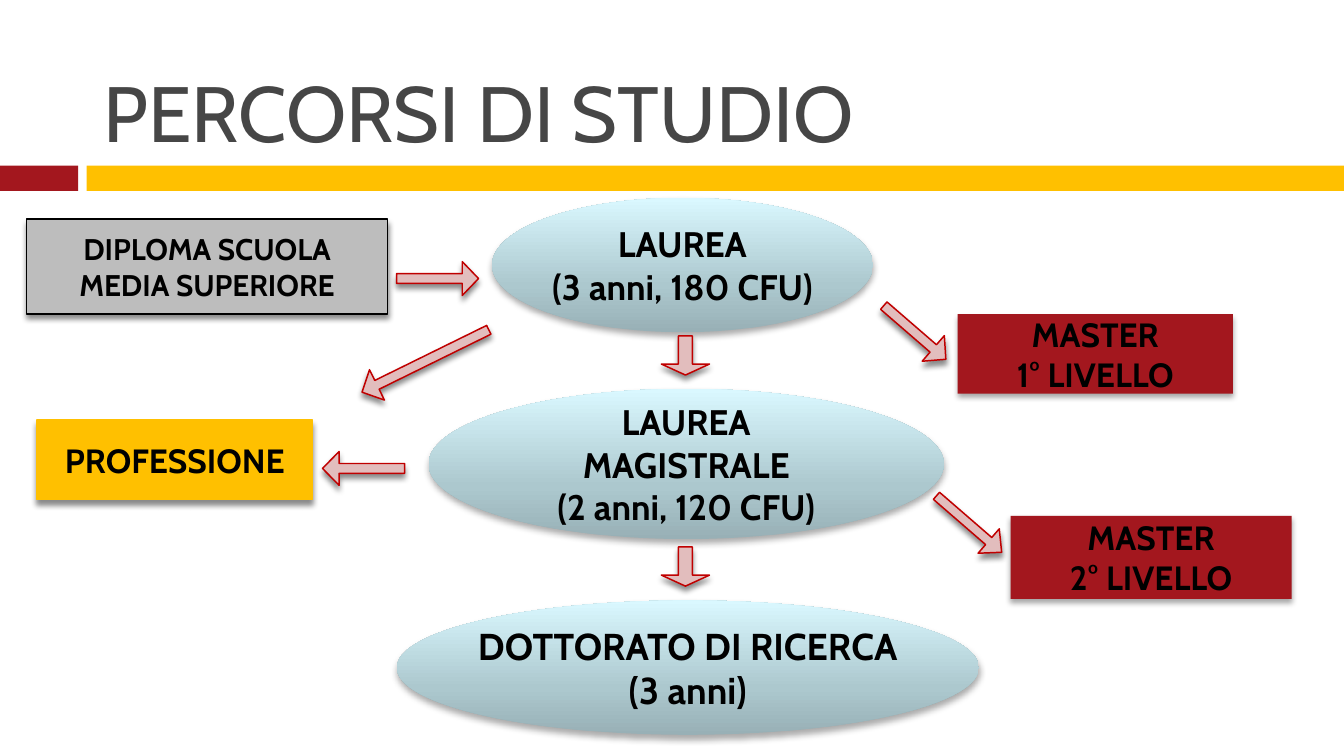
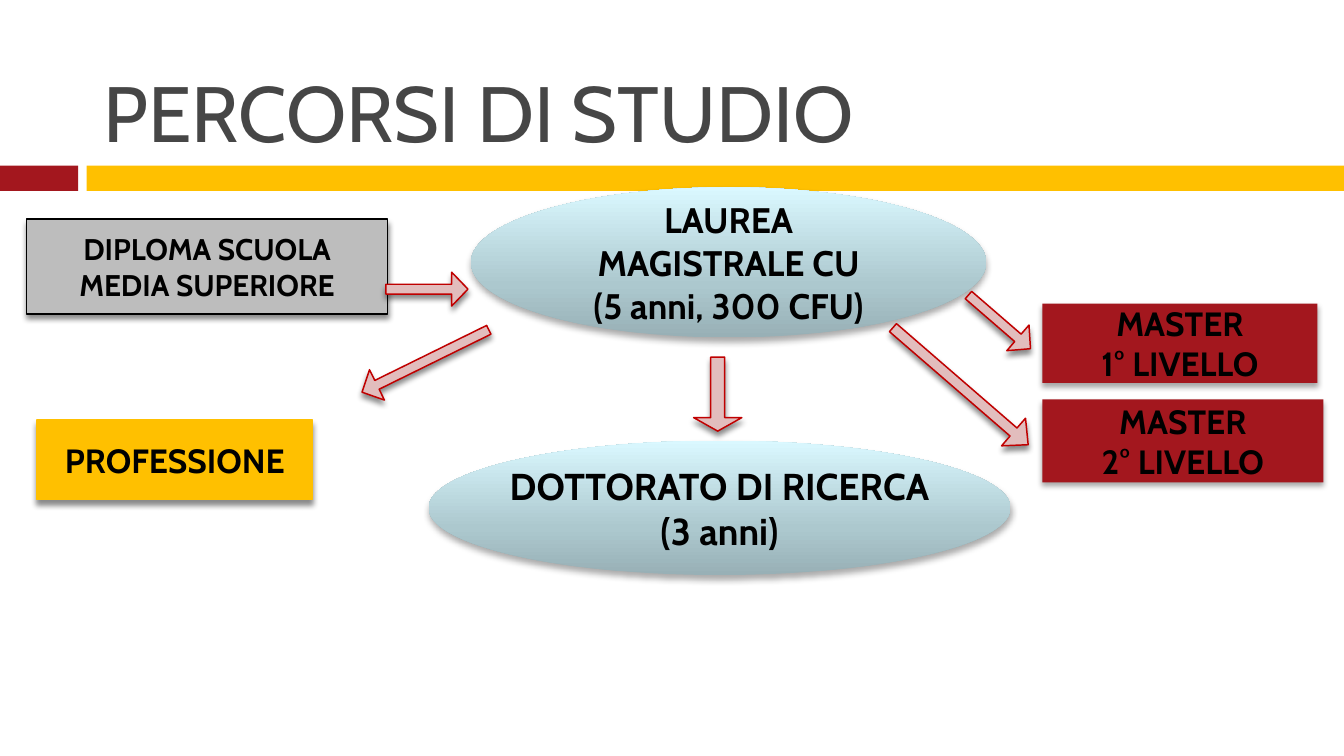
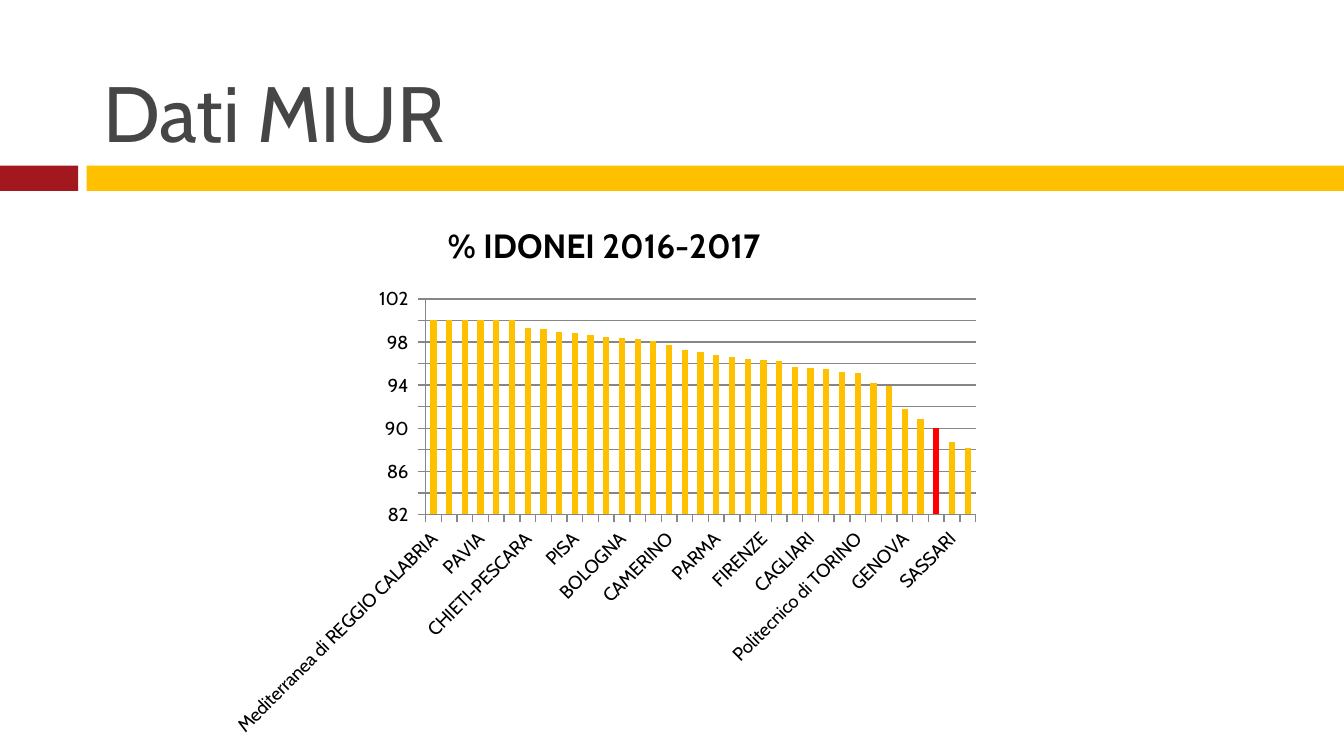
"""Build three slides on Italian study paths and the national results chart."""
from copy import deepcopy

from lxml.etree import SubElement
from pptx import Presentation
from pptx.chart.data import CategoryChartData
from pptx.dml.color import RGBColor
from pptx.enum.chart import XL_CHART_TYPE, XL_TICK_MARK
from pptx.enum.shapes import MSO_SHAPE
from pptx.enum.text import MSO_ANCHOR, MSO_AUTO_SIZE, PP_ALIGN
from pptx.oxml.ns import qn
from pptx.util import Cm, Pt

FONT = "Cabin"
COLORS = {
    "red": "A3171E", "yellow": "FFC000", "gray": "BDBDBD", "black": "000000",
    "title": "464646", "arrow": "E2BDBD", "arrow_line": "C00000",
    "highlight": "FF0000", "grid": "868686",
}
DEGREE_GRADIENT = [(0, "98B0B6"), (0.35, "ACC8CE"), (1, "DAF8FF")]
STYLES = {
    "school": dict(preset=MSO_SHAPE.RECTANGLE, fill="gray", line="black", shadow=(45, 3, 2.4)),
    "degree": dict(preset=MSO_SHAPE.OVAL, fill=None, line=None, shadow=(32, 3.5, 2.2)),
    "master": dict(preset=MSO_SHAPE.RECTANGLE, fill="red", line=None, shadow=(35, 3, 2)),
    "job": dict(preset=MSO_SHAPE.RECTANGLE, fill="yellow", line="yellow", shadow=(45, 3, 2.4)),
    "arrow": dict(preset=MSO_SHAPE.DOWN_ARROW, fill="arrow", line="arrow_line", shadow=(45, 3, 2.4)),
}


def color(name):
    return RGBColor.from_string(COLORS[name])


def write(text_frame, text, size=18, ink="black", bold=True, align=PP_ALIGN.CENTER):
    text_frame.text = text
    for paragraph in text_frame.paragraphs:
        paragraph.alignment = align
        for run in paragraph.runs:
            run.font.name = FONT
            run.font.size = Pt(size)
            run.font.bold = bold
            run.font.color.rgb = color(ink)


presentation = Presentation()
presentation.slide_width = Cm(25.4)
presentation.slide_height = Cm(14.29)
layout = presentation.slide_layouts[5]
layout_tree = layout.placeholders[0].element.getparent()
for placeholder in list(layout.placeholders)[1:]:
    layout_tree.remove(placeholder.element)

slides = []
for title_text in ("PERCORSI DI STUDIO", "PERCORSI DI STUDIO", "Dati MIUR"):
    slide = presentation.slides.add_slide(layout)
    title = slide.shapes.title
    title.left, title.top, title.width, title.height = Cm(1.7), Cm(0.33), Cm(22.66), Cm(2.79)
    title.text_frame.word_wrap = True
    title.text_frame.auto_size = MSO_AUTO_SIZE.NONE
    title.text_frame.vertical_anchor = MSO_ANCHOR.BOTTOM
    write(title.text_frame, title_text, size=42, ink="title", bold=False, align=PP_ALIGN.LEFT)
    slides.append(slide)

for number, (left, width, fill) in enumerate([(0, 1.48, "red"), (1.64, 23.76, "yellow")]):
    band = slides[0].shapes.add_shape(MSO_SHAPE.RECTANGLE, Cm(left), Cm(3.13), Cm(width), Cm(0.48))
    band.fill.solid()
    band.fill.fore_color.rgb = color(fill)
    band.line.fill.background()
    band.shadow.inherit = False
    band.element.nvSpPr.cNvPr.set("id", str(20 + number))
    layout_tree.append(band.element)

SCHOOL = ("school", 0.5, 4.14, 6.83, 1.8, "DIPLOMA SCUOLA\nMEDIA SUPERIORE", 16)
JOB = ("job", 0.7, 7.94, 5.21, 1.5, "PROFESSIONE", 18)
DOCTORATE = "DOTTORATO DI RICERCA\n(3 anni)"
FIRST_MASTER = "MASTER\n1° LIVELLO"
SECOND_MASTER = "MASTER\n2° LIVELLO"
path_boxes = [
    [
        SCHOOL,
        ("degree", 9.3, 3.74, 7.2, 2.54, "LAUREA\n(3 anni, 180 CFU)", 19),
        ("degree", 7.5, 11.35, 11, 2.54, DOCTORATE, 20),
        ("master", 19.1, 9.75, 5.31, 1.57, SECOND_MASTER, 18),
        ("degree", 8.1, 7.35, 9.74, 2.84, "LAUREA\nMAGISTRALE\n(2 anni, 120 CFU)", 19),
        ("master", 18.1, 5.94, 5.2, 1.5, FIRST_MASTER, 18),
        JOB,
    ],
    [
        SCHOOL,
        ("degree", 8.1, 8.33, 11, 2.54, DOCTORATE, 20),
        ("master", 19.7, 7.55, 5.31, 1.57, SECOND_MASTER, 18),
        ("master", 19.7, 5.74, 5.2, 1.5, FIRST_MASTER, 18),
        JOB,
        ("degree", 8.9, 3.54, 9.74, 2.84, "LAUREA\nMAGISTRALE CU\n(5 anni, 300 CFU)", 19),
    ],
]
path_arrows = [
    [
        (7.95, 4.49, 0.64, 1.55, 270, 0.48),
        (16.97, 5.51, 0.64, 1.55, 310.9, 0.49),
        (12.5, 6.35, 0.91, 0.74, 0, 0.28),
        (7.72, 5.49, 0.64, 2.67, 63.8, 0.49),
        (18.01, 9.09, 0.61, 1.63, 310.9, 0.53),
        (12.5, 10.34, 0.91, 0.74, 0, 0.28),
        (6.55, 8.08, 0.64, 1.55, 90, 0.49),
    ],
    [
        (7.75, 4.69, 0.64, 1.55, 270, 0.48),
        (18.57, 5.31, 0.64, 1.55, 310.9, 0.49),
        (13.11, 6.75, 0.91, 1.4, 0, 0.28),
        (7.72, 5.49, 0.64, 2.67, 63.8, 0.49),
        (17.81, 5.61, 0.69, 3.38, 310.9, 0.53),
    ],
]

for slide, boxes, arrows in zip(slides, path_boxes, path_arrows):
    items = [(*box, 0, None) for box in boxes]
    items += [("arrow", *arrow[:4], "", 18, *arrow[4:]) for arrow in arrows]
    for kind, left, top, width, height, text, size, rotation, head in items:
        style = STYLES[kind]
        shape = slide.shapes.add_shape(style["preset"], Cm(left), Cm(top), Cm(width), Cm(height))
        shape.rotation = rotation
        if head:
            shape.adjustments[0] = 0.29
            shape.adjustments[1] = head
        if style["fill"]:
            shape.fill.solid()
            shape.fill.fore_color.rgb = color(style["fill"])
        else:
            shape.fill.gradient()
            shape.fill.gradient_angle = 90
            stop_list = shape.element.spPr.find(".//" + qn("a:gsLst"))
            stop_list.append(deepcopy(stop_list[0]))
            for stop, (position, shade) in zip(shape.fill.gradient_stops, DEGREE_GRADIENT):
                stop.position = position
                stop.color.rgb = RGBColor.from_string(shade)
        if style["line"]:
            shape.line.color.rgb = color(style["line"])
            shape.line.width = Pt(0.79)
        else:
            shape.line.fill.background()
        shape.shadow.inherit = False
        opacity, blur, distance = style["shadow"]
        shadow = SubElement(
            shape.element.spPr.find(qn("a:effectLst")), qn("a:outerShdw"),
            blurRad=str(Pt(blur)), dist=str(Pt(distance)), dir="5400000", rotWithShape="0")
        shadow_color = SubElement(shadow, qn("a:srgbClr"), val=COLORS["black"])
        SubElement(shadow_color, qn("a:alpha"), val=str(opacity * 1000))
        if text:
            shape.text_frame.word_wrap = False
            shape.text_frame.vertical_anchor = MSO_ANCHOR.MIDDLE
            write(shape.text_frame, text, size=size)

LABEL_STEP = 3
labels = [
    "Mediterranea di REGGIO CALABRIA", "PAVIA", "CHIETI-PESCARA", "PISA", "BOLOGNA", "CAMERINO",
    "PARMA", "FIRENZE", "CAGLIARI", "Politecnico di TORINO", "GENOVA", "SASSARI",
]
shares = [
    100, 100, 100, 100, 100, 100, 99.3, 99.2, 98.9, 98.8, 98.7, 98.5,
    98.4, 98.3, 98.1, 97.7, 97.3, 97.1, 96.8, 96.6, 96.4, 96.3, 96.2, 95.7,
    95.6, 95.5, 95.2, 95.1, 94.2, 93.9, 91.8, 90.9, 90, 88.7, 88.2,
]
chart_title = "% IDONEI 2016-2017"
chart_data = CategoryChartData()
chart_data.categories = [
    "" if index % LABEL_STEP else labels[index // LABEL_STEP] for index in range(len(shares))]
chart_data.add_series(chart_title, shares)
chart = slides[2].shapes.add_chart(
    XL_CHART_TYPE.COLUMN_STACKED, Cm(4.1), Cm(3.74), Cm(14.63), Cm(10.39), chart_data).chart
chart.font.name = FONT
chart.font.size = Pt(10)
chart.font.color.rgb = color("black")
chart.has_legend = False
chart.has_title = True
write(chart.chart_title.text_frame, chart_title, size=18)

plot = chart.plots[0]
plot.gap_width = 150
plot.overlap = 100
plot.vary_by_categories = False
series = plot.series[0]
series.format.fill.solid()
series.format.fill.fore_color.rgb = color("yellow")
highlight = series.points[32]
highlight.format.fill.solid()
highlight.format.fill.fore_color.rgb = color("highlight")

category_axis = chart.category_axis
value_axis = chart.value_axis
for axis in (category_axis, value_axis):
    axis.major_tick_mark = XL_TICK_MARK.OUTSIDE
    axis.minor_tick_mark = XL_TICK_MARK.NONE
    axis.format.line.color.rgb = color("grid")
    axis.tick_labels.font.size = Pt(10)
    axis.tick_labels.font.name = FONT
category_axis.has_major_gridlines = False
axis_text = chart.element.find(".//" + qn("c:catAx")).find(qn("c:txPr"))
axis_text.find(qn("a:bodyPr")).set("rot", "-2700000")

value_axis.minimum_scale = 82
value_axis.maximum_scale = 102
value_axis.major_unit = 2
value_axis.has_major_gridlines = True
value_axis.major_gridlines.format.line.color.rgb = color("grid")
value_axis.tick_labels.number_format = '_-* #,##0_-;\\-* #,##0_-;_-* "-"??_-;_-@_'
value_axis.tick_labels.number_format_is_linked = False

presentation.save("out.pptx")
